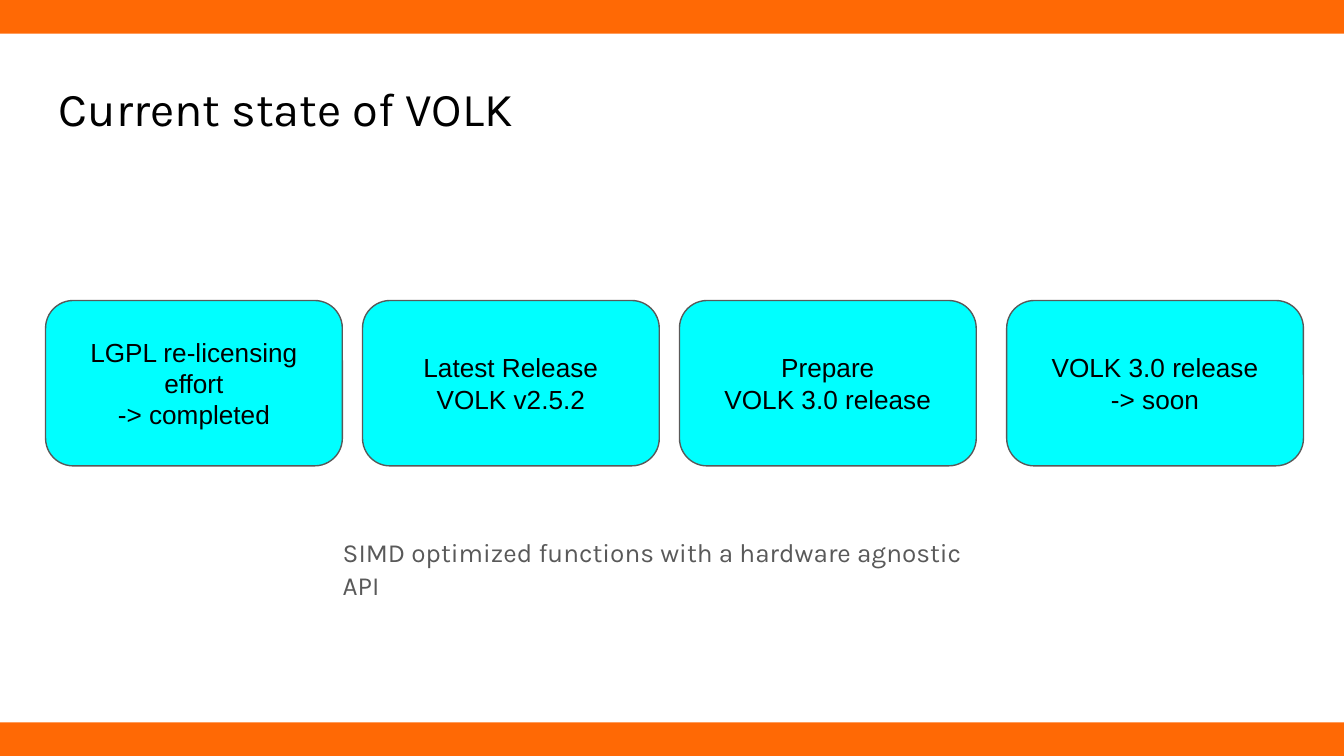
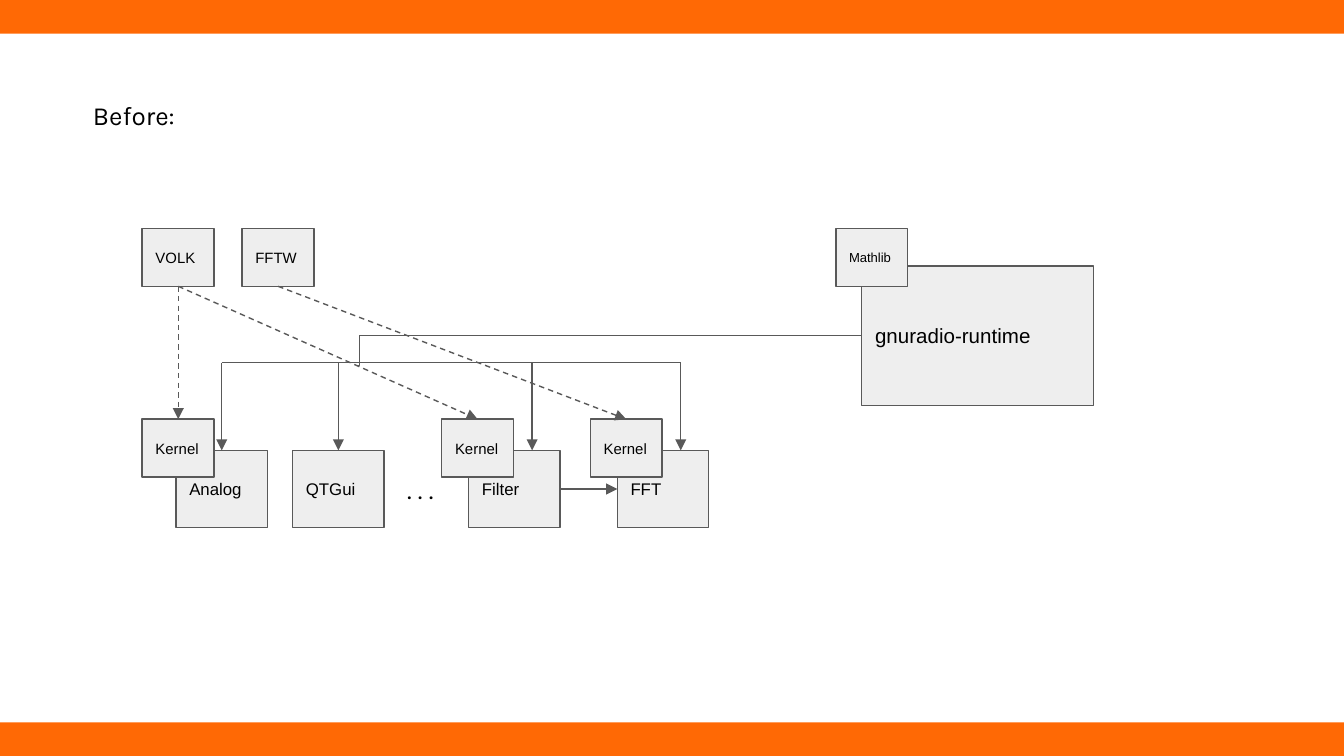
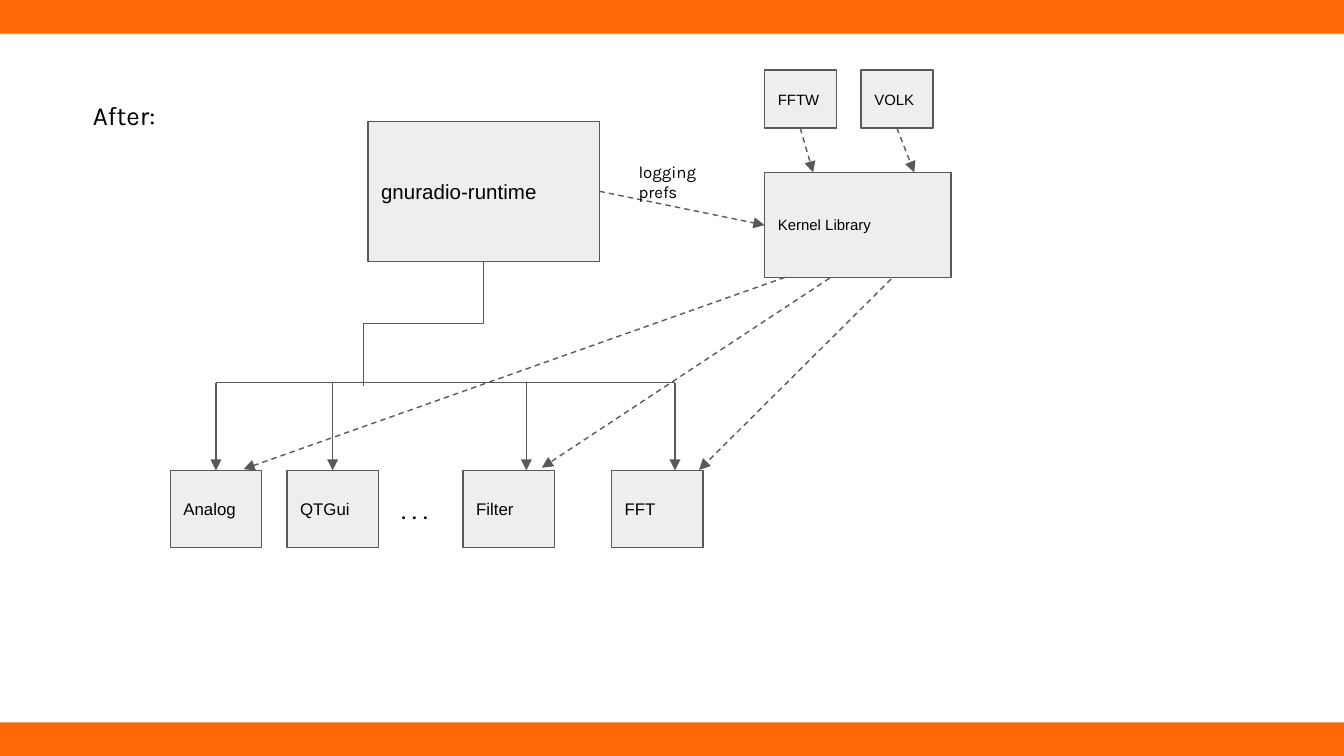
from lxml.etree import SubElement as Sub
from pptx import Presentation
from pptx.dml.color import RGBColor
from pptx.enum.dml import MSO_LINE as Dash
from pptx.enum.shapes import MSO_CONNECTOR as Link, MSO_SHAPE as Kind
from pptx.enum.text import MSO_ANCHOR as Anchor, PP_ALIGN as Align
from pptx.oxml.ns import qn
from pptx.util import Pt

WIDE, HIGH, BAND = 720, 405, 18
ORANGE, CYAN, PALE, GRAY, BLACK = "FF6905", "00FFFF", "EEEEEE", "595959", "000000"

STEPS = [
    (24.4, "LGPL re-licensing effort\n-> completed"),
    (194.2, "Latest Release\nVOLK v2.5.2"),
    (364, "Prepare\nVOLK 3.0 release"),
    (539.3, "VOLK 3.0 release\n-> soon"),
]
MODS = [("Analog", 0, 0), ("QTGui", 62.5, 0), ("Filter", 156.8, 9.5), ("FFT", 236.4, 9.5)]
MOD_W, MOD_H, DROP = 49, 41.4, 47
CORE = (124, 74.8)
CHIP = (38.5, 31)

BEFORE = {
    "title": "Before:",
    "row": (94.3, 241.3),
    "nodes": [
        ("gnuradio-runtime", 461.7, 142.4, CORE, 11),
        ("Kernel", 76.2, 224.6, CHIP, 8),
        ("Kernel", 236.7, 224.6, CHIP, 8),
        ("Kernel", 316.3, 224.6, CHIP, 8),
        ("VOLK", 76.2, 122.4, CHIP, 8),
        ("FFTW", 129.7, 122.4, CHIP, 8),
        ("Mathlib", 447.8, 122.4, CHIP, 7),
    ],
    "dashed": [
        (95.5, 153.4, 95.5, 224.6),
        (95.5, 153.4, 255.9, 224.6),
        (149, 153.4, 335.5, 224.6),
    ],
}
AFTER = {
    "title": "After:",
    "row": (91.2, 252),
    "nodes": [
        ("gnuradio-runtime", 197.1, 65.2, CORE, 11),
        ("FFTW", 409.6, 37.6, CHIP, 8),
        ("VOLK", 461.3, 37.6, CHIP, 8),
        ("Kernel Library", 409.6, 92.4, (100, 56.2), 8),
    ],
    "dashed": [
        (428.7, 68.6, 435.6, 92.4),
        (480.5, 68.6, 489.8, 92.4),
        (321.1, 102.5, 409.6, 120.6),
        (420.5, 148.6, 130.5, 251.3),
        (444.5, 149, 290.3, 250.6),
        (477.4, 149.5, 374.5, 251.8),
    ],
}


def rgb(code):
    return RGBColor.from_string(code)


def write(shape, text, size, font="Arial", color=BLACK, align=Align.LEFT, anchor=Anchor.TOP):
    frame = shape.text_frame
    frame.text = text
    frame.word_wrap = True
    frame.vertical_anchor = anchor
    frame.margin_left = frame.margin_right = Pt(7.2)
    frame.margin_top = frame.margin_bottom = Pt(7.2)
    for para in frame.paragraphs:
        para.alignment = align
        for run in para.runs:
            run.font.size = Pt(size)
            run.font.name = font
            run.font.color.rgb = rgb(color)


def label(slide, text, x, y, w, h, size=14, color=BLACK):
    box = slide.shapes.add_textbox(Pt(x), Pt(y), Pt(w), Pt(h))
    write(box, text, size, "Karla", color)
    return box


def block(slide, kind, x, y, w, h, fill, edge=None):
    shape = slide.shapes.add_shape(kind, Pt(x), Pt(y), Pt(w), Pt(h))
    shape.shadow.inherit = False
    shape.fill.solid()
    shape.fill.fore_color.rgb = rgb(fill)
    if edge:
        shape.line.color.rgb = rgb(edge)
        shape.line.width = Pt(0.75)
    else:
        shape.line.fill.background()
    return shape


def node(slide, text, x, y, w, h, size):
    box = block(slide, Kind.RECTANGLE, x, y, w, h, PALE, GRAY)
    write(box, text, size, anchor=Anchor.MIDDLE)


def wire(slide, ends, kind=Link.STRAIGHT, head=True, dash=False):
    line = slide.shapes.add_connector(kind, *[Pt(v) for v in ends])
    line.line.color.rgb = rgb(GRAY)
    line.line.width = Pt(0.75)
    if dash:
        line.line.dash_style = Dash.DASH
    props = line._element.spPr
    if head:
        Sub(props.find(qn("a:ln")), qn("a:tailEnd"), type="triangle")
    Sub(props, qn("a:effectLst"))
    return props


def elbow(slide, ends, bend):
    props = wire(slide, ends, Link.ELBOW, head=False)
    geom = props.find(qn("a:prstGeom"))
    rules = geom.find(qn("a:avLst"))
    if rules is None:
        rules = Sub(geom, qn("a:avLst"))
    Sub(rules, qn("a:gd"), name="adj1", fmla=f"val {bend}")
    return props


def elbow_down(slide, x1, y1, x2, y2):
    mid_x, mid_y = (x1 + x2) / 2, (y1 + y2) / 2
    half_w, half_h = (y2 - y1) / 2, (x1 - x2) / 2
    ends = (mid_x - half_w, mid_y - half_h, mid_x + half_w, mid_y + half_h)
    elbow(slide, ends, 50000).find(qn("a:xfrm")).set("rot", "5400000")


def start(deck):
    slide = deck.slides.add_slide(deck.slide_layouts[6])
    for y in (HIGH - BAND, 0):
        block(slide, Kind.RECTANGLE, 0, y, WIDE, BAND, ORANGE)
    return slide


def state(deck):
    slide = start(deck)
    label(slide, "Current state of VOLK", 24.5, 35.2, 671, 45, 25.2)
    for x, text in STEPS:
        step = block(slide, Kind.ROUNDED_RECTANGLE, x, 161, 159, 88.6, CYAN, GRAY)
        write(step, text, 14, align=Align.CENTER, anchor=Anchor.MIDDLE)
    note = label(slide, "SIMD optimized functions with a hardware agnostic API",
                 176.5, 279.5, 367, 74, color=GRAY)
    note.text_frame.paragraphs[0].line_spacing = 1.05


def graph(deck, plan):
    slide = start(deck)
    left, top = plan["row"]
    bus = top - DROP
    drops = [left + x + MOD_W / 2 + shift for _, x, shift in MODS]
    for text, x, _ in MODS:
        node(slide, text, left + x, top, MOD_W, MOD_H, 9)
    for text, x, y, (w, h), size in plan["nodes"]:
        node(slide, text, x, y, w, h, size)
    wire(slide, (drops[0], bus, drops[-1], bus), head=False)
    for x in drops:
        wire(slide, (x, bus, x, top))
    for ends in plan["dashed"]:
        wire(slide, ends, dash=True)
    label(slide, ". . .", left + 116.7, top + 5, 49, 31.5)
    label(slide, plan["title"], 42.7, 46, 400, 31.5)
    return slide


def main():
    deck = Presentation()
    deck.slide_width, deck.slide_height = Pt(WIDE), Pt(HIGH)
    state(deck)
    before = graph(deck, BEFORE)
    elbow(before, (461.7, 179.8, 191.6, 195.8), 99600)
    wire(before, (299.8, 262, 330.7, 262))
    after = graph(deck, AFTER)
    elbow_down(after, 259.1, 140, 194.6, 206.6)
    label(after, "logging\nprefs", 335, 79.3, 49, 36, 9)
    deck.save("out.pptx")


if __name__ == "__main__":
    main()
